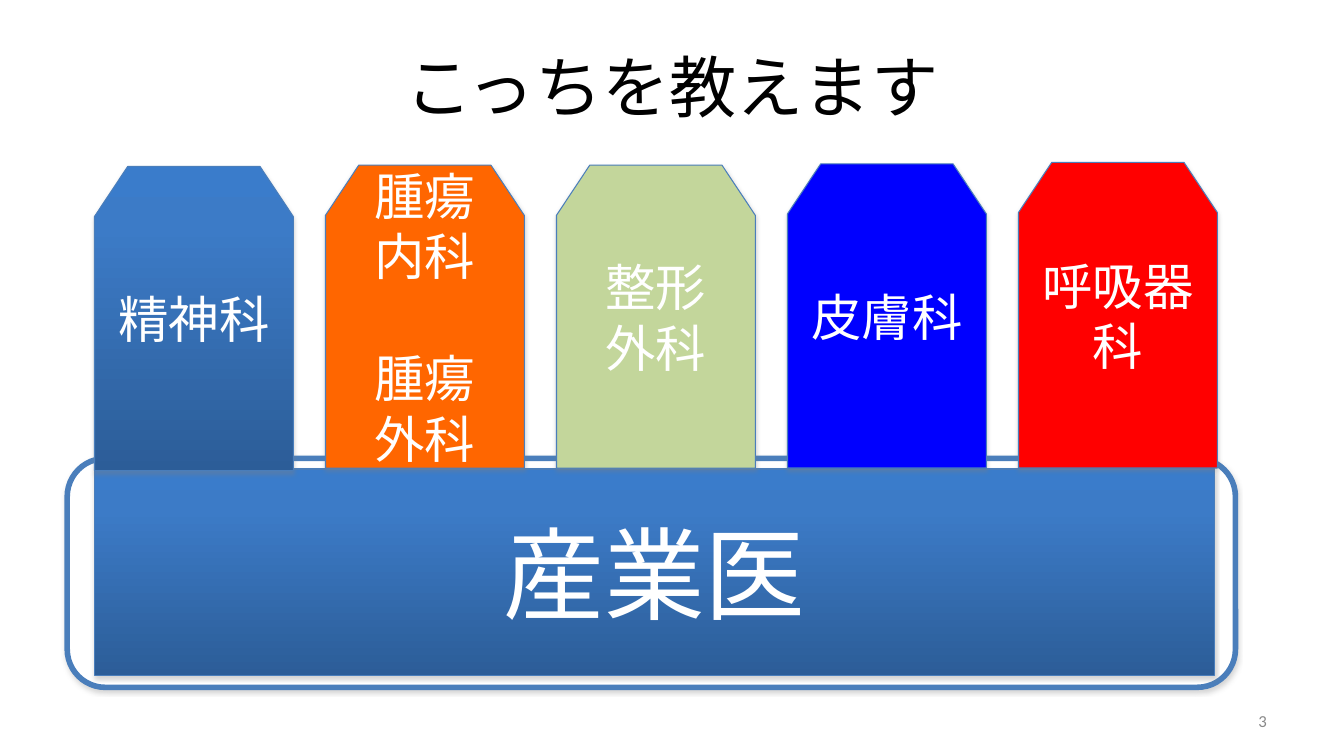
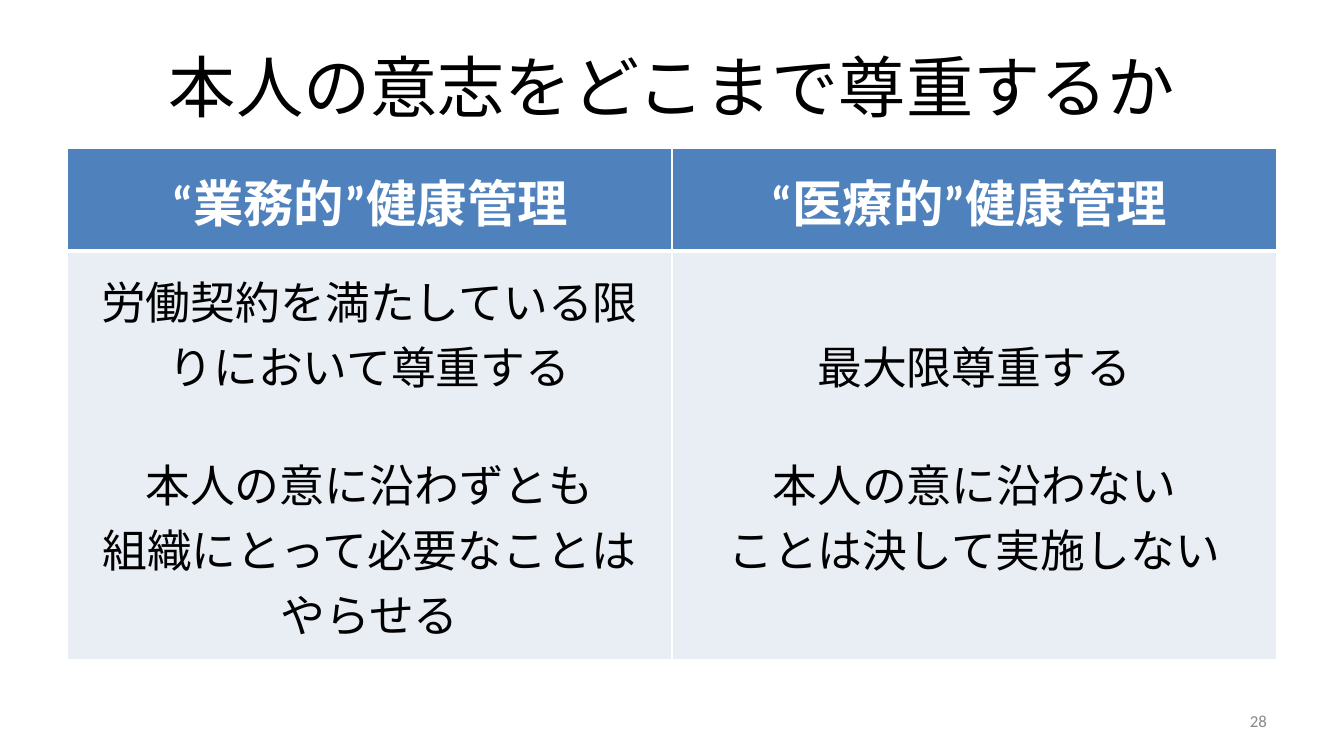
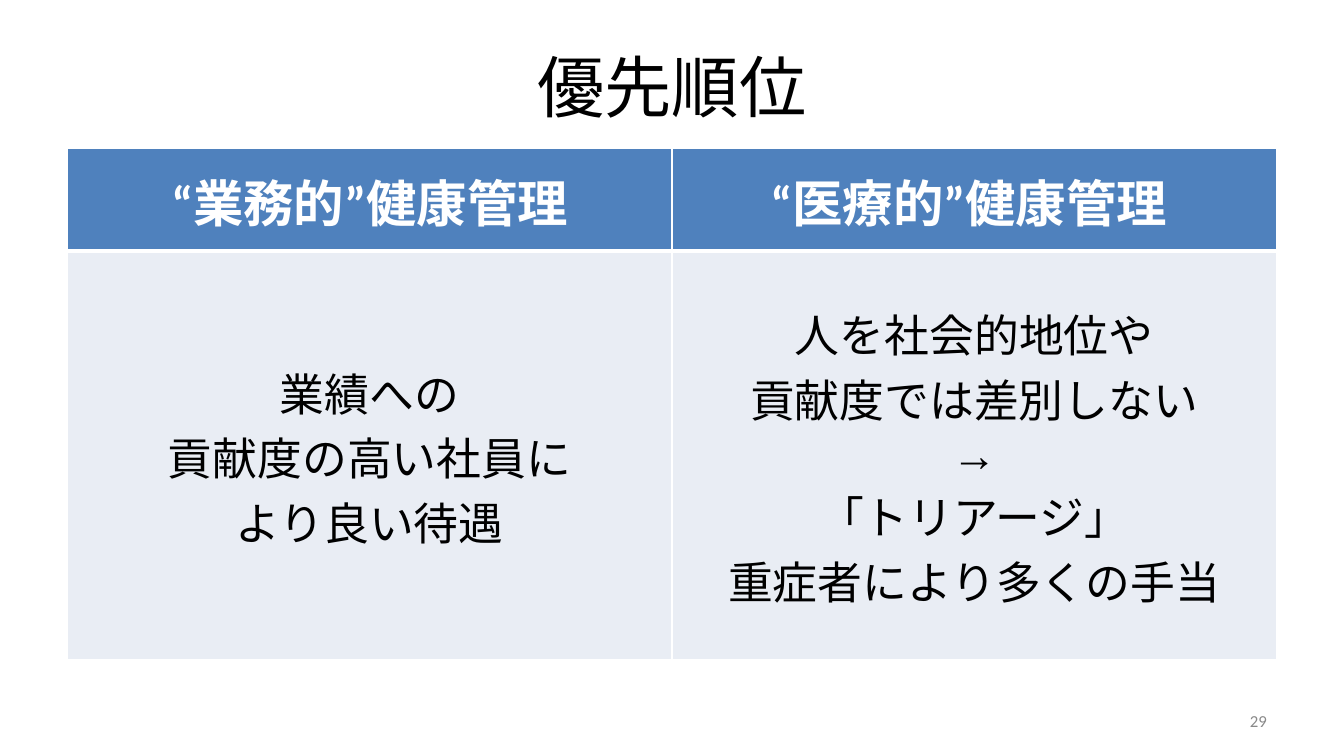
from copy import deepcopy
from dataclasses import dataclass

from lxml.etree import SubElement
from pptx import Presentation
from pptx.dml.color import RGBColor
from pptx.enum.lang import MSO_LANGUAGE_ID
from pptx.enum.shapes import MSO_SHAPE
from pptx.enum.text import MSO_ANCHOR, PP_ALIGN
from pptx.oxml.ns import qn
from pptx.util import Pt


@dataclass(frozen=True)
class Theme:
    font: str = "Calibri"
    body_font: str = "Arial"
    black: str = "000000"
    white: str = "FFFFFF"
    grey: str = "898989"
    outline: str = "4A7EBB"
    shadow: str = "808080"
    header: str = "4F81BD"
    band: str = "E9EDF4"
    gradient: tuple = ((0, "3A7CCB"), (0.2, "3C7BC7"), (1, "2C5D98"))
    title_size: float = 48
    base_size: float = 72
    label_size: float = 36
    body_size: float = 32
    number_size: float = 12


T = Theme()


@dataclass(frozen=True)
class Line:
    """One paragraph; gap is the space before it, pitch its exact line height."""
    text: str
    gap: float = 0
    pitch: float | None = None


@dataclass(frozen=True)
class Style:
    size: float
    color: str
    font: str = T.font
    bold: bool = False
    align: PP_ALIGN = PP_ALIGN.CENTER


@dataclass(frozen=True)
class Tag:
    top: float
    bottom: float
    fill: str | None
    lines: tuple[Line, ...]


@dataclass(frozen=True)
class Comparison:
    title: str
    number: int
    work: tuple[Line, ...]
    medical: tuple[Line, ...]


TITLE = Style(T.title_size, T.black)
BASE = Style(T.base_size, T.white)
LABEL = Style(T.label_size, T.white)
HEADER = Style(T.label_size, T.white, bold=True)
WORK = Style(T.body_size, T.black)
MEDICAL = Style(T.body_size, T.black, T.body_font)
NUMBER = Style(T.number_size, T.grey, align=PP_ALIGN.RIGHT)

TITLE_PITCH, HEADER_PITCH, BODY_PITCH, ARROW_PITCH = 69, 52, 46.3, 37
LABEL_GAP, BODY_GAP = 44, 38
TAG_LEFT, TAG_STEP, TAG_WIDTH = 67.5, 165, 142
SNIP_X, SNIP_Y = 23.75, 35.75
COLUMN_WIDTH, ROW_HEIGHTS = 432, (73.5, 292)


def body(*texts: str, gap_at: int | None = None) -> tuple[Line, ...]:
    return tuple(
        Line(t, BODY_GAP if i == gap_at else 0, ARROW_PITCH if t == "→" else BODY_PITCH)
        for i, t in enumerate(texts)
    )


TAGS = (
    Tag(118.9, 336.2, None, (Line("精神科"),)),
    Tag(118, 334.3, "FF6600",
        (Line("腫瘍"), Line("内科"), Line("腫瘍", LABEL_GAP), Line("外科"))),
    Tag(118, 334.3, "C3D69B", (Line("整形"), Line("外科"))),
    Tag(117, 334.3, "0000FF", (Line("皮膚科"),)),
    Tag(116, 334.3, "FF0000", (Line("呼吸器科"),)),
)

COMPARISONS = (
    Comparison(
        "本人の意志をどこまで尊重するか", 28,
        body("労働契約を満たしている限りにおいて尊重する", "本人の意に沿わずとも",
             "組織にとって必要なことはやらせる", gap_at=1),
        body("最大限尊重する", "本人の意に沿わない", "ことは決して実施しない", gap_at=1),
    ),
    Comparison(
        "優先順位", 29,
        body("業績への", "貢献度の高い社員に", "より良い待遇"),
        body("人を社会的地位や", "貢献度では差別しない", "→", "「トリアージ」",
             "重症者により多くの手当"),
    ),
)


def write(tf, lines: tuple[Line, ...], style: Style) -> None:
    for i, line in enumerate(lines):
        p = tf.add_paragraph() if i else tf.paragraphs[0]
        p.alignment = style.align
        p.space_before = Pt(line.gap)
        if line.pitch:
            p.line_spacing = Pt(line.pitch)
        r = p.add_run()
        r.text = line.text
        formats = {
            "size": Pt(style.size),
            "bold": style.bold,
            "name": style.font,
            "language_id": MSO_LANGUAGE_ID.JAPANESE,
        }
        for name, value in formats.items():
            setattr(r.font, name, value)
        r.font.color.rgb = RGBColor.from_string(style.color)
        latin = r.font._element.find(qn("a:latin"))
        east_asian = latin.makeelement(qn("a:ea"), {"typeface": T.font})
        latin.addnext(east_asian)


def add_text(s, box: tuple, line: Line, style: Style) -> None:
    tf = s.shapes.add_textbox(*map(Pt, box)).text_frame
    tf.word_wrap = True
    tf.vertical_anchor = MSO_ANCHOR.MIDDLE
    write(tf, (line,), style)


def new_slide(prs, title: str, number: int):
    s = prs.slides.add_slide(prs.slide_layouts[6])
    add_text(s, (48, 22, 864, 67), Line(title, pitch=TITLE_PITCH), TITLE)
    add_text(s, (688, 500.5, 224, 29), Line(str(number)), NUMBER)
    return s


def fill_gradient(sp) -> None:
    sp.fill.gradient()
    sp.fill.gradient_angle = 270
    stops = sp._element.spPr.find(".//" + qn("a:gsLst"))
    stops.insert(1, deepcopy(stops[0]))
    for stop, (position, color) in zip(sp.fill.gradient_stops, T.gradient):
        stop.position = position
        stop.color.rgb = RGBColor.from_string(color)


def paint(sp, fill: str | None, line_width: float = 0.75) -> None:
    """Fill (gradient when no colour is given), outline and soft shadow."""
    if fill:
        sp.fill.solid()
        sp.fill.fore_color.rgb = RGBColor.from_string(fill)
    else:
        fill_gradient(sp)
    sp.line.color.rgb = RGBColor.from_string(T.outline)
    sp.line.width = Pt(line_width)
    sp.shadow.inherit = False
    effects = sp._element.spPr.find(qn("a:effectLst"))
    shadow = SubElement(effects, qn("a:outerShdw"), blurRad=str(Pt(3.1)),
                        dist=str(Pt(1.8)), dir="5400000", rotWithShape="0")
    color = SubElement(shadow, qn("a:srgbClr"), val=T.shadow)
    SubElement(color, qn("a:alpha"), val="35000")


def label(sp, lines: tuple[Line, ...], style: Style) -> None:
    tf = sp.text_frame
    tf.word_wrap = True
    tf.vertical_anchor = MSO_ANCHOR.MIDDLE
    write(tf, lines, style)


def add_tag(s, tag: Tag, left: float) -> None:
    right, shoulder = left + TAG_WIDTH, tag.top + SNIP_Y
    corners = (
        (left + SNIP_X, tag.top), (right - SNIP_X, tag.top), (right, shoulder),
        (right, tag.bottom), (left, tag.bottom), (left, shoulder),
    )
    start, *rest = [(Pt(x), Pt(y)) for x, y in corners]
    outline = s.shapes.build_freeform(*start)
    outline.add_line_segments(rest, close=True)
    sp = outline.convert_to_shape()
    paint(sp, tag.fill)
    label(sp, tag.lines, LABEL)


def foundation_slide(prs) -> None:
    s = new_slide(prs, "こっちを教えます", 3)
    frame = s.shapes.add_shape(MSO_SHAPE.ROUNDED_RECTANGLE,
                               Pt(48), Pt(327.5), Pt(834.5), Pt(163.5))
    paint(frame, T.white, 4)
    base = s.shapes.add_shape(MSO_SHAPE.RECTANGLE, Pt(67.5), Pt(335), Pt(800), Pt(147.5))
    paint(base, None)
    label(base, (Line("産業医"),), BASE)
    for i, tag in enumerate(TAGS):
        add_tag(s, tag, TAG_LEFT + i * TAG_STEP)


def set_borders(cell, widths: dict[str, float]) -> None:
    tc_pr = cell._tc.get_or_add_tcPr()
    for side, width in widths.items():
        ln = SubElement(tc_pr, qn(f"a:ln{side}"), w=str(Pt(width)))
        SubElement(SubElement(ln, qn("a:solidFill")), qn("a:srgbClr"), val=T.white)


def comparison_slide(prs, c: Comparison) -> None:
    s = new_slide(prs, c.title, c.number)
    table = s.shapes.add_table(2, 2, Pt(48), Pt(106), Pt(2 * COLUMN_WIDTH),
                               Pt(sum(ROW_HEIGHTS))).table
    for column in table.columns:
        column.width = Pt(COLUMN_WIDTH)
    for row, height in zip(table.rows, ROW_HEIGHTS):
        row.height = Pt(height)
    headers = ("“業務的”健康管理", "“医療的”健康管理 ")
    columns = ((headers[0], c.work, WORK, 9.5, 3.5), (headers[1], c.medical, MEDICAL, 0.75, 0.5))
    for col, (header, lines, style, side, edge) in enumerate(columns):
        rows = (
            ((Line(header, pitch=HEADER_PITCH),), HEADER, T.header, 1, 3),
            (lines, style, T.band, 3, 1),
        )
        for row, (text, text_style, fill, top, bottom) in enumerate(rows):
            cell = table.cell(row, col)
            formats = {
                "margin_left": Pt(side), "margin_right": Pt(side),
                "margin_top": Pt(edge), "margin_bottom": Pt(edge),
                "vertical_anchor": MSO_ANCHOR.MIDDLE,
            }
            for name, value in formats.items():
                setattr(cell, name, value)
            set_borders(cell, {"L": 1, "R": 1, "T": top, "B": bottom})
            cell.fill.solid()
            cell.fill.fore_color.rgb = RGBColor.from_string(fill)
            write(cell.text_frame, text, text_style)


def main() -> None:
    prs = Presentation()
    prs.slide_width, prs.slide_height = Pt(960), Pt(540)
    foundation_slide(prs)
    for comparison in COMPARISONS:
        comparison_slide(prs, comparison)
    prs.save("out.pptx")


if __name__ == "__main__":
    main()
